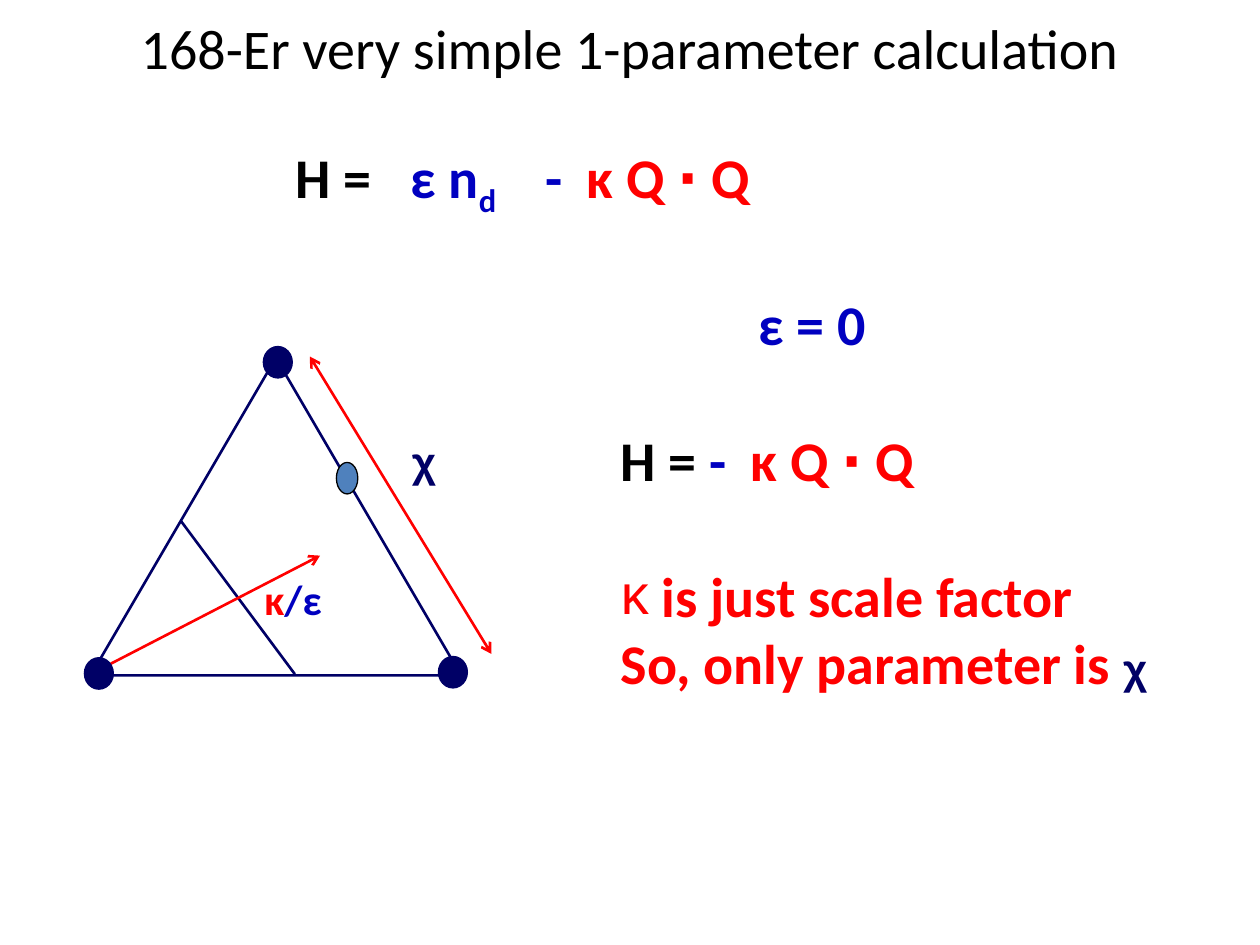
from lxml import etree
from pptx import Presentation
from pptx.dml.color import RGBColor
from pptx.enum.shapes import MSO_CONNECTOR, MSO_SHAPE
from pptx.enum.text import MSO_ANCHOR, PP_ALIGN
from pptx.oxml.ns import qn
from pptx.util import Inches, Pt

TRIANGLE = MSO_SHAPE.ISOSCELES_TRIANGLE
OVAL = MSO_SHAPE.OVAL
STRAIGHT = MSO_CONNECTOR.STRAIGHT
MIDDLE = MSO_ANCHOR.MIDDLE
CENTER = PP_ALIGN.CENTER

BLACK = RGBColor(0x00, 0x00, 0x00)
NAVY = RGBColor(0x00, 0x00, 0x66)
BLUE = RGBColor(0x00, 0x00, 0xC0)
RED = RGBColor(0xFF, 0x00, 0x00)
STEEL = RGBColor(0x4F, 0x81, 0xBD)

SLIDE_W, SLIDE_H = 10, 7.5
DOT_W, DOT_H = 0.23, 0.25


def add_run(p, text, color=BLACK, size=32, font="Calibri", bold=True, subscript=False):
    """Append a formatted run to a paragraph."""
    r = p.add_run()
    r.text = text
    r.font.name, r.font.size, r.font.bold = font, Pt(size), bold
    r.font.color.rgb = color
    if subscript:
        r.font._element.set("baseline", "-25000")


def set_tabs(p, stops):
    """Give a paragraph left tab stops, in inches."""
    tabs = etree.SubElement(p._p.get_or_add_pPr(), qn("a:tabLst"))
    for stop in stops:
        etree.SubElement(tabs, qn("a:tab"), pos=str(Inches(stop)), algn="l")


def set_bullet(p, char, font):
    """Give a paragraph a character bullet without indent."""
    pPr = p._p.get_or_add_pPr()
    pPr.set("marL", "0")
    pPr.set("indent", "0")
    etree.SubElement(pPr, qn("a:buFont"), typeface=font)
    etree.SubElement(pPr, qn("a:buChar"), char=char)


def add_text(slide, box, *runs, **fmt):
    """Add a wrapping text box whose first paragraph holds (text, color) runs."""
    tf = slide.shapes.add_textbox(*map(Inches, box)).text_frame
    tf.word_wrap = True
    for text, color in runs:
        add_run(tf.paragraphs[0], text, color, **fmt)
    return tf


def add_outline(slide, kind, box, line, width, fill=None):
    """Add a preset shape with an outline and an optional fill."""
    sp = slide.shapes.add_shape(kind, *map(Inches, box))
    sp.shadow.inherit = False
    if fill is None:
        sp.fill.background()
    else:
        sp.fill.solid()
        sp.fill.fore_color.rgb = fill
    sp.line.color.rgb = line
    sp.line.width = Pt(width)


def add_line(slide, start, end, color, arrows=()):
    """Add a straight line with open arrowheads at the named ends."""
    cxn = slide.shapes.add_connector(STRAIGHT, *map(Inches, start + end))
    cxn.line.color.rgb = color
    cxn.line.width = Pt(1.5)
    ln = cxn.line._get_or_add_ln()
    for arrow in arrows:
        etree.SubElement(ln, qn(f"a:{arrow}"), type="arrow")
    etree.SubElement(cxn._element.spPr, qn("a:effectLst"))


def add_title(slide, text):
    """Place and format the title."""
    title = slide.shapes.title
    title.left, title.top = Inches(0.05 * SLIDE_W), Inches(-0.25)
    title.width, title.height = Inches(0.9 * SLIDE_W), Inches(SLIDE_H / 6)
    tf = title.text_frame
    tf.vertical_anchor = MIDDLE
    tf.paragraphs[0].alignment = CENTER
    add_run(tf.paragraphs[0], text, bold=False)


def add_triangle_diagram(slide):
    """Draw the symmetry triangle with its vertices, arrows and labels."""
    add_outline(slide, TRIANGLE, (0.72, 2.84, 2.94, 2.52), NAVY, 1.5)
    add_line(slide, (1.44, 4.14), (2.34, 5.35), NAVY)
    add_line(slide, (0.72, 5.35), (2.54, 4.41), RED, ["tailEnd"])
    add_line(slide, (2.46, 2.83), (3.9, 5.19), RED, ["headEnd", "tailEnd"])
    add_text(slide, (3.17, 3.41, 0.9, 0.5), ("χ", NAVY), size=24, font="Arial")
    for left, top in ((2.09, 2.75), (3.48, 5.21), (0.67, 5.22)):
        add_outline(slide, OVAL, (left, top, DOT_W, DOT_H), NAVY, 0.75, NAVY)
    add_text(slide, (2, 4.5, 0.7, 0.5), ("κ", RED), ("/ε", BLUE), size=24)
    add_outline(slide, OVAL, (2.67, 3.67, 0.17, DOT_H), BLACK, 0.75, STEEL)


def add_equations(slide):
    """Write the Hamiltonian, its limit and the conclusion."""
    tf = add_text(slide, (2.25, 1.08, 4.87, 1.17), ("H =\t", BLACK), ("ε n", BLUE))
    p = tf.paragraphs[0]
    add_run(p, "d", BLUE, subscript=True)
    add_run(p, "\t-\t", BLUE)
    add_run(p, "κ Q ⋅ Q", RED)
    set_tabs(p, (0.91, 1.98, 2.31))

    add_text(slide, (5.92, 2.25, 1.25, 0.63), ("ε = 0", BLUE))

    tf = add_text(slide, (4.83, 3.33, 5.12, 2.23),
                  ("H = ", BLACK), ("-\t", BLUE), ("κ Q ⋅ Q", RED))
    set_tabs(tf.paragraphs[0], (1.03,))
    p = tf.add_paragraph()
    p.space_before = Pt(39)
    set_bullet(p, "κ", "Arial")
    add_run(p, " is just scale factor", RED)
    p = tf.add_paragraph()
    add_run(p, "So, only parameter is ", RED)
    add_run(p, "χ", NAVY, size=24, font="Arial")


def main():
    """Build and save the slide."""
    prs = Presentation()
    prs.slide_width, prs.slide_height = Inches(SLIDE_W), Inches(SLIDE_H)
    slide = prs.slides.add_slide(prs.slide_layouts[5])
    add_title(slide, "168-Er very simple 1-parameter calculation")
    add_triangle_diagram(slide)
    add_equations(slide)
    prs.save("out.pptx")


if __name__ == "__main__":
    main()
